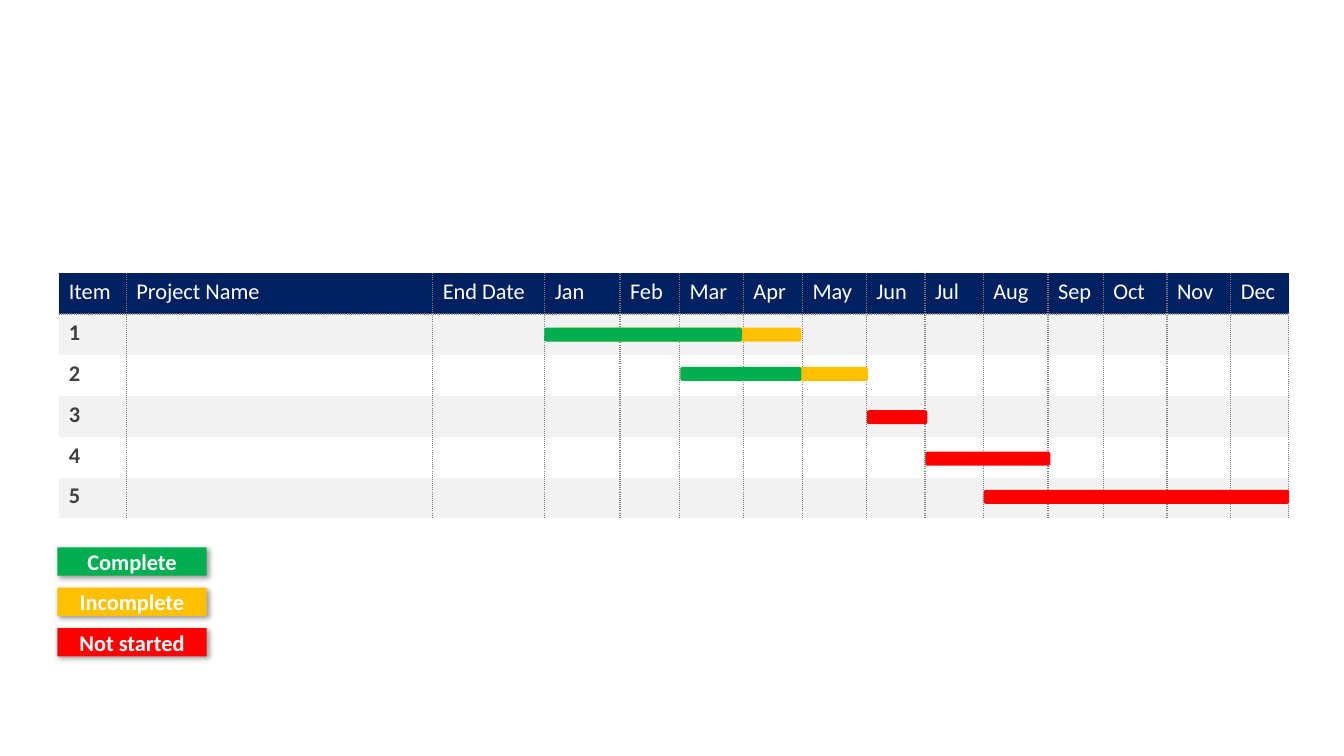
from lxml.etree import SubElement
from pptx import Presentation
from pptx.dml.color import RGBColor
from pptx.enum.shapes import MSO_SHAPE
from pptx.enum.text import MSO_ANCHOR, PP_ALIGN
from pptx.oxml.ns import qn
from pptx.util import Pt

COLORS = {
    "navy": "002060",
    "band": "F2F2F2",
    "white": "FFFFFF",
    "ink": "404040",
    "grid": "808080",
    "shadow": "000000",
    "complete": "00B050",
    "incomplete": "FFC000",
    "not_started": "FF0000",
}
FONT = "Calibri"
HEADERS = ["Item", "Project Name", "End Date", "Jan", "Feb", "Mar", "Apr", "May",
           "Jun", "Jul", "Aug", "Sep", "Oct", "Nov", "Dec"]
COLUMN_WIDTHS = [48.2, 218.9, 80, 53.8, 42.6, 45.6, 42.2, 45.6, 42, 41.6,
                 46.3, 39.4, 45.6, 45.6, 41.3]
ITEM_COUNT = 5
TABLE_LEFT, TABLE_TOP, ROW_HEIGHT = 42, 195.1, 29.2
BAR_HEIGHT = 10
BARS = [
    ("incomplete", 397.4, 234, 175),
    ("incomplete", 486, 262.1, 133.9),
    ("not_started", 619.2, 293, 43.2),
    ("not_started", 661, 322.6, 89.3),
    ("complete", 388.8, 234, 141.1),
    ("complete", 486, 262.1, 86.4),
    ("not_started", 702.7, 349.9, 218.2),
]
LEGEND = [("Complete", "complete"), ("Incomplete", "incomplete"),
          ("Not started", "not_started")]
LEGEND_LEFT, LEGEND_TOP, LEGEND_STEP = 41, 391, 28.8
LEGEND_WIDTH, LEGEND_HEIGHT = 106.6, 20.2


def rgb(name):
    return RGBColor.from_string(COLORS[name])


def format_text(para, color, bold):
    for span in para.runs:
        span.font.name = FONT
        span.font.size = Pt(16)
        span.font.bold = bold
        span.font.color.rgb = rgb(color)


def set_borders(cell, dotted_sides):
    properties = cell._tc.get_or_add_tcPr()
    for side in "LRTB":
        line = SubElement(properties, qn(f"a:ln{side}"), w=str(Pt(1)))
        if side in dotted_sides:
            fill = SubElement(line, qn("a:solidFill"))
            SubElement(fill, qn("a:srgbClr"), val=COLORS["grid"])
            SubElement(line, qn("a:prstDash"), val="sysDot")
        else:
            SubElement(line, qn("a:noFill"))


def dotted_sides(row, column):
    last = len(HEADERS) - 1
    sides = "L" if column > 0 else ""
    if row > 0 or column < last:
        sides += "R"
    return sides + {0: "B", 1: "T"}.get(row, "")


def fill_cell(cell, row, column):
    set_borders(cell, dotted_sides(row, column))
    background = "navy" if row == 0 else "band" if row % 2 else "white"
    cell.fill.solid()
    cell.fill.fore_color.rgb = rgb(background)
    if row == 0:
        cell.text_frame.text = HEADERS[column]
    elif column == 0:
        cell.text_frame.text = str(row)
    format_text(cell.text_frame.paragraphs[0], "ink" if row else "white", row > 0)


def add_schedule(page):
    row_count = ITEM_COUNT + 1
    frame = page.shapes.add_table(
        row_count, len(HEADERS), Pt(TABLE_LEFT), Pt(TABLE_TOP),
        Pt(sum(COLUMN_WIDTHS)), Pt(ROW_HEIGHT * row_count))
    table = frame.table
    table.horz_banding = False
    for column, width in zip(table.columns, COLUMN_WIDTHS):
        column.width = Pt(width)
    for row_index, row in enumerate(table.rows):
        row.height = Pt(ROW_HEIGHT)
        for column_index, cell in enumerate(row.cells):
            fill_cell(cell, row_index, column_index)


def add_block(page, kind, left, top, width, height, color):
    box = page.shapes.add_shape(kind, Pt(left), Pt(top), Pt(width), Pt(height))
    box.shadow.inherit = False
    box.fill.solid()
    box.fill.fore_color.rgb = rgb(color)
    box.line.fill.background()
    return box


def add_drop_shadow(box):
    effects = box._element.spPr.find(qn("a:effectLst"))
    shadow = SubElement(effects, qn("a:outerShdw"), blurRad=str(Pt(4)),
                        dist=str(Pt(2)), dir=str(45 * 60000), algn="tl",
                        rotWithShape="0")
    color = SubElement(shadow, qn("a:srgbClr"), val=COLORS["shadow"])
    SubElement(color, qn("a:alpha"), val="40000")


def add_legend_entry(page, top, label, color):
    box = add_block(page, MSO_SHAPE.RECTANGLE, LEGEND_LEFT, top,
                    LEGEND_WIDTH, LEGEND_HEIGHT, color)
    add_drop_shadow(box)
    frame = box.text_frame
    frame.margin_left = frame.margin_right = Pt(0)
    frame.margin_top = frame.margin_bottom = Pt(0)
    frame.vertical_anchor = MSO_ANCHOR.MIDDLE
    frame.text = label
    para = frame.paragraphs[0]
    para.alignment = PP_ALIGN.CENTER
    format_text(para, "white", True)


def main():
    deck = Presentation()
    deck.slide_width = Pt(960)
    deck.slide_height = Pt(540)
    page = deck.slides.add_slide(deck.slide_layouts[6])
    add_schedule(page)
    for status, left, top, width in BARS:
        add_block(page, MSO_SHAPE.ROUNDED_RECTANGLE, left, top, width,
                  BAR_HEIGHT, status)
    for index, (label, status) in enumerate(LEGEND):
        add_legend_entry(page, LEGEND_TOP + index * LEGEND_STEP, label, status)
    deck.save("out.pptx")


if __name__ == "__main__":
    main()
